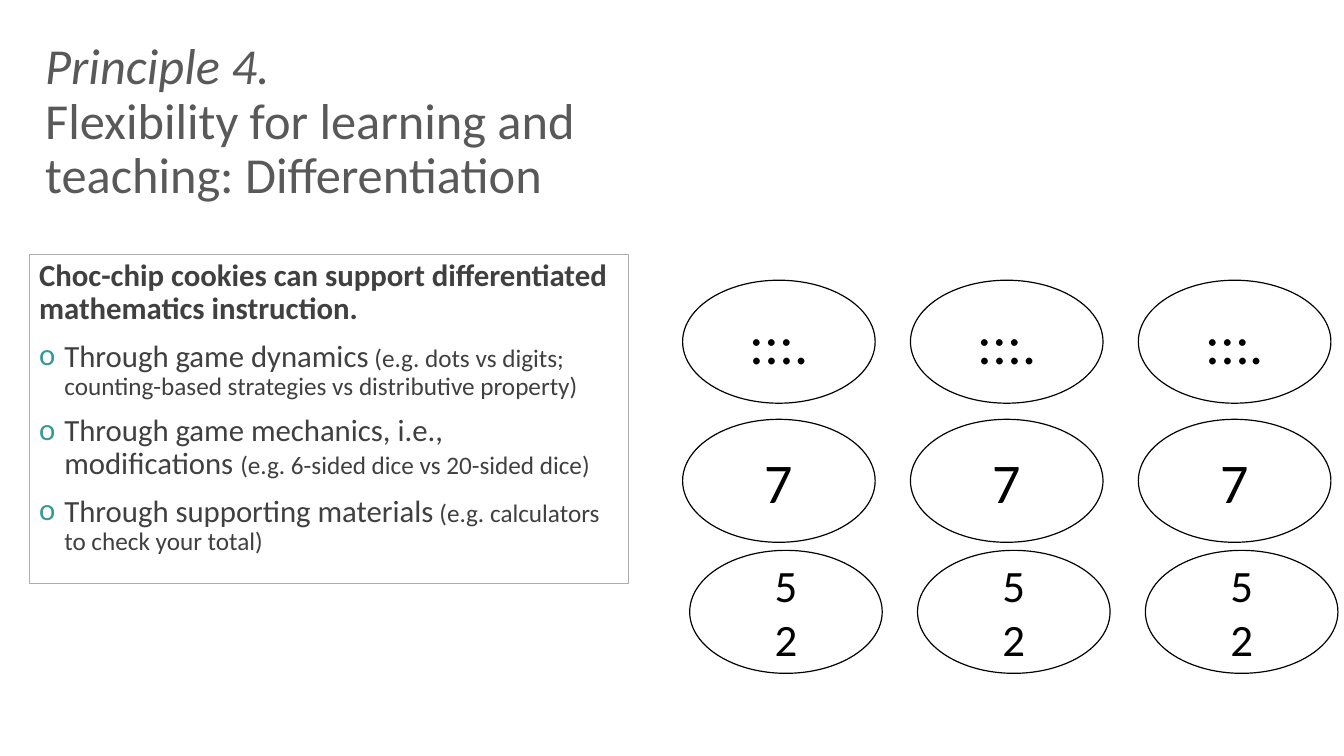
"""Build the slide on differentiation with choc-chip cookie games."""
from lxml.etree import SubElement
from pptx import Presentation
from pptx.dml.color import RGBColor
from pptx.enum.shapes import MSO_SHAPE
from pptx.enum.text import MSO_ANCHOR, PP_ALIGN
from pptx.oxml.ns import qn
from pptx.util import Inches, Pt

THEME = {
    "font": "Calibri",
    "white": RGBColor.from_string("FFFFFF"),
    "black": RGBColor.from_string("000000"),
    "title": RGBColor.from_string("595959"),
    "body": RGBColor.from_string("404040"),
    "border": RGBColor.from_string("AFABAB"),
    "bullet": "339999",
    "title_size": 36,
    "body_size": 22,
    "detail_size": 18,
    "cookie_size": 40,
    "sum_size": 32,
}


def add_text(p, text, size, color, **formats):
    r = p.add_run()
    r.text = text
    r.font.color.rgb = THEME[color]
    values = {"name": THEME["font"], "size": Pt(THEME[size]), **formats}
    for name, value in values.items():
        setattr(r.font, name, value)


def add_outlined(kind, left, top, width, height, line, weight):
    sp = s.shapes.add_shape(kind, Inches(left), Inches(top), Inches(width), Inches(height))
    sp.shadow.inherit = False
    sp.fill.solid()
    sp.fill.fore_color.rgb = THEME["white"]
    sp.line.color.rgb = THEME[line]
    sp.line.width = Pt(weight)
    sp.text_frame.word_wrap = True
    return sp.text_frame


prs = Presentation()
prs.slide_width, prs.slide_height = Inches(13.33), Inches(7.5)
s = prs.slides.add_slide(prs.slide_layouts[6])

tf = add_outlined(MSO_SHAPE.RECTANGLE, 0.29, 2.53, 5.94, 3.26, "border", 0.75)
tf.vertical_anchor = MSO_ANCHOR.TOP
p = tf.paragraphs[0]
p.alignment, p.line_spacing = PP_ALIGN.LEFT, 0.9
add_text(p, "Choc-chip cookies can support differentiated mathematics instruction.",
         "body_size", "body", bold=True)

supports = [
    ("Through game dynamics",
     " (e.g. dots vs digits; counting-based strategies vs distributive property)"),
    ("Through game mechanics, i.e., modifications ", "(e.g. 6-sided dice vs 20-sided dice)"),
    ("Through supporting materials", " (e.g. calculators to check your total)"),
]
for support, example in supports:
    p = tf.add_paragraph()
    p.alignment, p.line_spacing, p.space_before = PP_ALIGN.LEFT, 0.9, Pt(10)
    pPr = p._p.get_or_add_pPr()
    pPr.set("marL", str(Inches(0.25)))
    pPr.set("indent", str(Inches(-0.25)))
    SubElement(SubElement(pPr, qn("a:buClr")), qn("a:srgbClr"), val=THEME["bullet"])
    SubElement(pPr, qn("a:buFont"), typeface=THEME["font"])
    SubElement(pPr, qn("a:buChar"), char="o")
    add_text(p, support, "body_size", "body")
    add_text(p, example, "detail_size", "body")

cookie_rows = [
    (6.77, 2.78, [":::."], "cookie_size"),
    (6.77, 4.16, ["7"], "cookie_size"),
    (6.84, 5.46, ["5", "2"], "sum_size"),
]
for left, top, lines, size in cookie_rows:
    for column in range(3):
        tf = add_outlined(MSO_SHAPE.OVAL, left + column * 2.26, top, 1.91, 1.22, "black", 0.85)
        tf.vertical_anchor = MSO_ANCHOR.MIDDLE
        for i, line in enumerate(lines):
            p = tf.add_paragraph() if i else tf.paragraphs[0]
            p.alignment = PP_ALIGN.CENTER
            add_text(p, line, size, "black")

tf = s.shapes.add_textbox(Inches(0.35), Inches(0.36), Inches(6.08), Inches(1.45)).text_frame
tf.word_wrap = True
p = tf.paragraphs[0]
p.line_spacing = 0.9
add_text(p, "Principle 4. ", "title_size", "title", italic=True)
p.add_line_break()
add_text(p, "Flexibility for learning and teaching: Differentiation", "title_size", "title")

prs.save("out.pptx")
